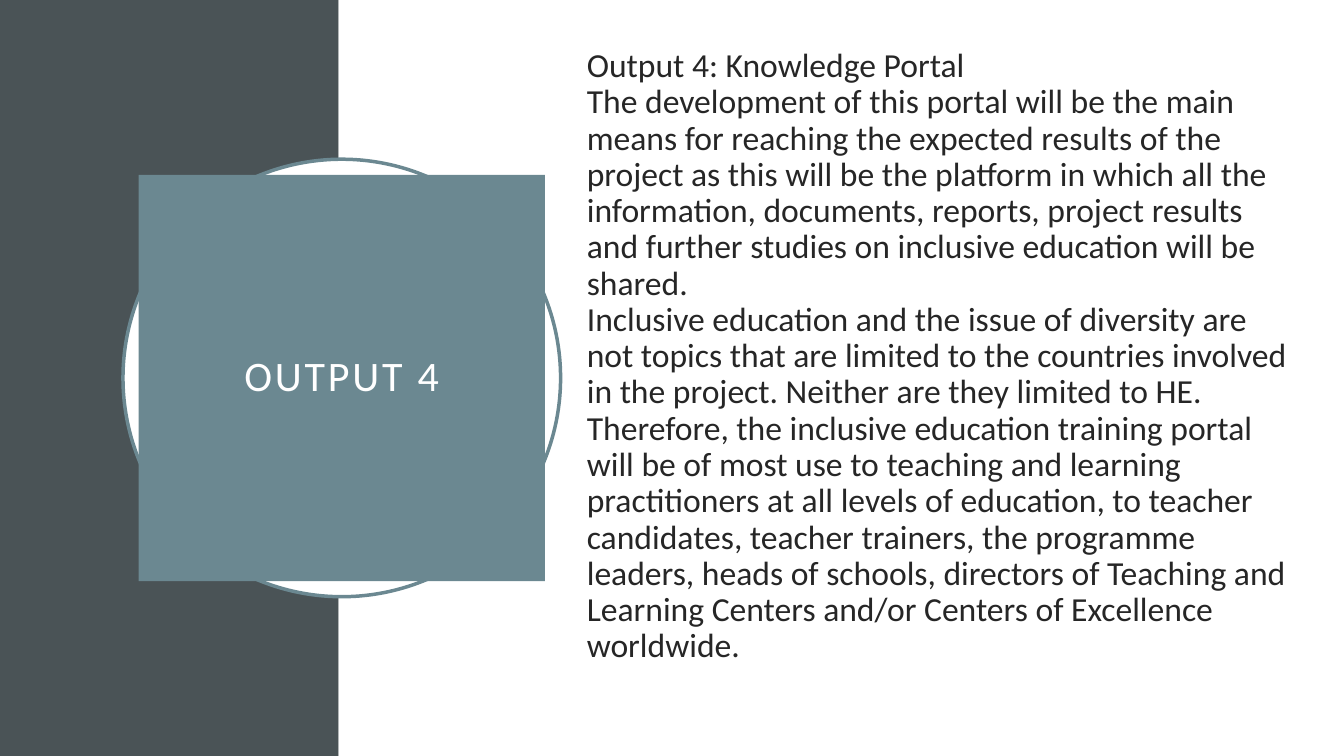
from lxml import etree
from pptx import Presentation
from pptx.dml.color import RGBColor
from pptx.enum.shapes import MSO_SHAPE
from pptx.enum.text import MSO_ANCHOR, MSO_AUTO_SIZE, PP_ALIGN
from pptx.oxml.ns import qn
from pptx.util import Inches, Pt

RECTANGLE, OVAL = MSO_SHAPE.RECTANGLE, MSO_SHAPE.OVAL
MIDDLE = MSO_ANCHOR.MIDDLE
NO_AUTOFIT = MSO_AUTO_SIZE.NONE
LEFT, CENTER = PP_ALIGN.LEFT, PP_ALIGN.CENTER

WIDTH, HEIGHT = 13.33, 7.5
BAND_WIDTH = 3.36
CENTER_X, CENTER_Y = 3.39, 3.75
RING_SIZE, TITLE_SIZE = 4.34, 4.03

BODY_LINES = [
    "Output 4: Knowledge Portal",
    "The development of this portal will be the main means for reaching the "
    "expected results of the project as this will be the platform in which all "
    "the information, documents, reports, project results and further studies "
    "on inclusive education will be shared.",
    "Inclusive education and the issue of diversity are not topics that are "
    "limited to the countries involved in the project. Neither are they limited "
    "to HE. Therefore, the inclusive education training portal will be of most "
    "use to teaching and learning practitioners at all levels of education, to "
    "teacher candidates, teacher trainers, the programme leaders, heads of "
    "schools, directors of Teaching and Learning Centers and/or Centers of "
    "Excellence worldwide.",
]


def color(value):
    return RGBColor.from_string(value)


def centered(size):
    """Box of a square centred on the title's midpoint."""
    return CENTER_X - size / 2, CENTER_Y - size / 2, size, size


class SlideBuilder:
    FONT = "Calibri"
    SLATE, TEAL, WHITE, INK = "4A5356", "6B8891", "FFFFFF", "262626"

    def __init__(self, slide):
        self.slide = slide

    def shape(self, kind, box, fill, line=None):
        shape = self.slide.shapes.add_shape(kind, *map(Inches, box))
        shape.shadow.inherit = False
        shape.fill.solid()
        shape.fill.fore_color.rgb = color(fill)
        if line:
            shape.line.color.rgb = color(line)
            shape.line.width = Pt(2.5)
        else:
            shape.line.fill.background()

    def placeholder(self, shape, box, insets):
        """Place a placeholder in front and return its first paragraph."""
        shape.left, shape.top, shape.width, shape.height = map(Inches, box)
        shape.element.getparent().append(shape.element)
        frame = shape.text_frame
        frame.word_wrap = True
        frame.auto_size = NO_AUTOFIT
        frame.vertical_anchor = MIDDLE
        (frame.margin_left, frame.margin_top,
         frame.margin_right, frame.margin_bottom) = map(Inches, insets)
        paragraph = frame.paragraphs[0]
        paragraph.line_spacing = 0.9
        return paragraph

    def run(self, paragraph, text, size, ink):
        run = paragraph.add_run()
        run.text = text
        run.font.name = self.FONT
        run.font.size = Pt(size)
        run.font.color.rgb = color(ink)
        return run

    def title(self, text, box):
        shape = self.slide.shapes.title
        paragraph = self.placeholder(shape, box, [0.2] * 4)
        shape.fill.solid()
        shape.fill.fore_color.rgb = color(self.TEAL)
        paragraph.alignment = CENTER
        run = self.run(paragraph, text, 30, self.WHITE)
        run.font._element.set("spc", "200")

    def body(self, lines, box):
        # The deeper bottom inset lifts the text slightly above the middle
        paragraph = self.placeholder(
            self.slide.placeholders[1], box, (0.1, 0.05, 0.1, 0.46))
        paragraph.alignment = LEFT
        paragraph.space_before = Pt(10)
        properties = paragraph._p.get_or_add_pPr()
        properties.set("marL", "0")
        properties.set("indent", "0")
        etree.SubElement(properties, qn("a:buNone"))
        for index, line in enumerate(lines):
            if index:
                paragraph.add_line_break()
            self.run(paragraph, line, 24, self.INK)


def main():
    presentation = Presentation()
    presentation.slide_width = Inches(WIDTH)
    presentation.slide_height = Inches(HEIGHT)
    slide = presentation.slides.add_slide(presentation.slide_layouts[1])
    builder = SlideBuilder(slide)

    # Background panels
    builder.shape(RECTANGLE, (0, 0, BAND_WIDTH, HEIGHT), builder.SLATE)
    builder.shape(RECTANGLE, (BAND_WIDTH, 0, WIDTH - BAND_WIDTH, HEIGHT),
                  builder.WHITE)

    # Ring and title
    builder.shape(OVAL, centered(RING_SIZE), builder.WHITE, builder.TEAL)
    builder.title("OUTPUT 4", centered(TITLE_SIZE))

    # Body text
    builder.body(BODY_LINES, (5.72, 0.33, 7.21, 6.83))

    presentation.save("out.pptx")


if __name__ == "__main__":
    main()
